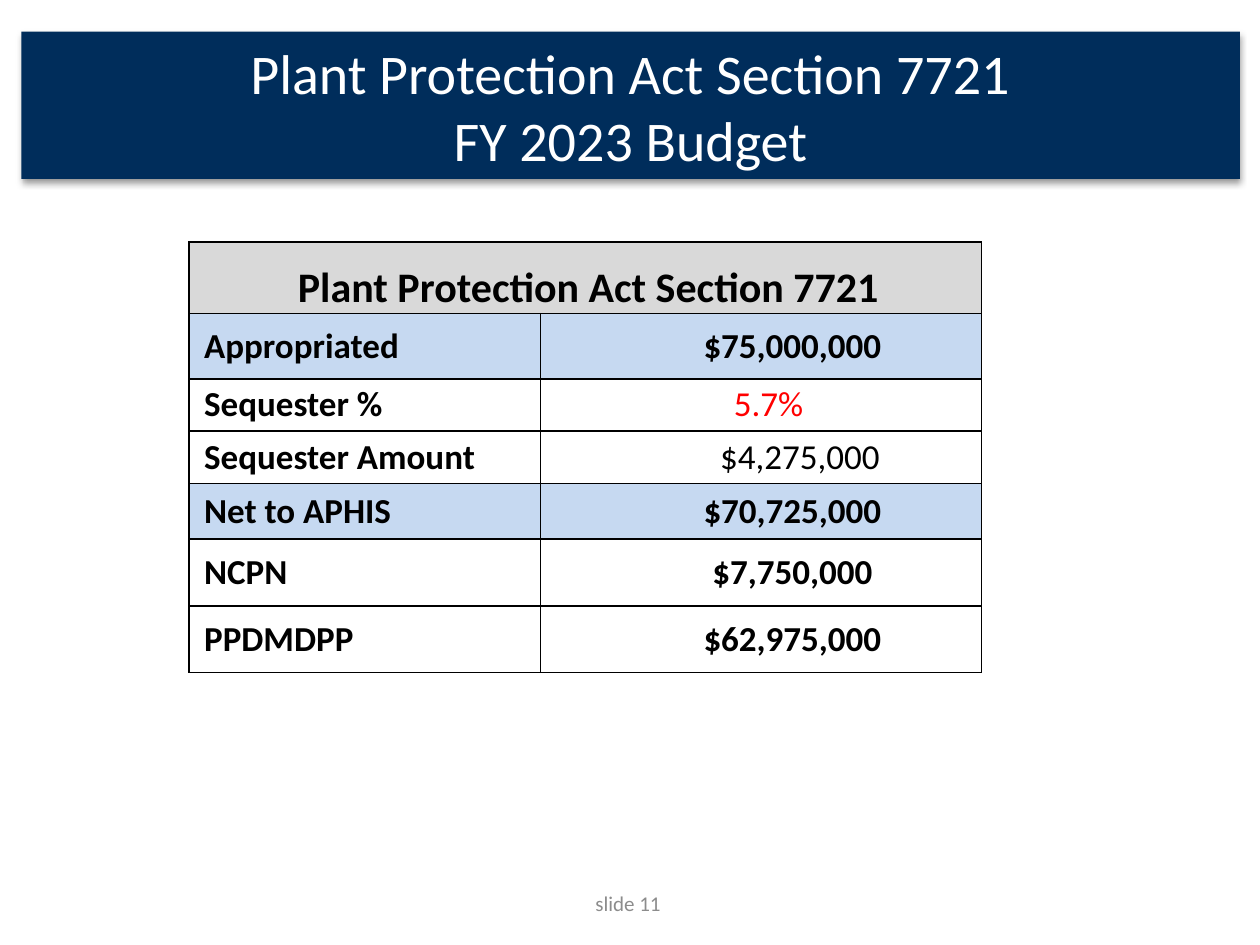
from dataclasses import dataclass

from lxml import etree
from pptx import Presentation
from pptx import util as u
from pptx.dml.color import RGBColor
from pptx.enum import text
from pptx.oxml import parse_xml

NS = "http://schemas.openxmlformats.org/drawingml/2006/main"
MID, LOW = text.MSO_ANCHOR.MIDDLE, text.MSO_ANCHOR.BOTTOM
LEFT, CENTER = text.PP_ALIGN.LEFT, text.PP_ALIGN.CENTER


@dataclass(frozen=True)
class Theme:
    face: str = "Calibri"
    navy: str = "002D5B"
    white: str = "FFFFFF"
    black: str = "000000"
    red: str = "FF0000"
    grey: str = "8C8C8C"
    head: str = "D9D9D9"
    band: str = "C6D9F1"
    title: int = 32
    top: int = 24
    body: int = 20
    foot: int = 12


T = Theme()
COLS = [2.79, 3.5]
ROWS = [0.57, 0.52, 0.41, 0.42, 0.44, 0.53, 0.53]
# label, value, fill, value indent, value bold, value colour
BUDGET = [
    ("Appropriated", "$75,000,000", T.band, 0.5, True, T.black),
    ("Sequester %", "5.7%", T.white, 0.12, False, T.red),
    ("Sequester Amount", "$4,275,000", T.white, 0.62, False, T.black),
    ("Net to APHIS", "$70,725,000", T.band, 0.5, True, T.black),
    ("NCPN", "$7,750,000", None, 0.5, True, T.black),
    ("PPDMDPP", "$62,975,000", None, 0.5, True, T.black),
]


def style(para, size, color, bold=False, align=CENTER):
    para.alignment = align
    font = para.font
    font.name, font.size, font.bold = T.face, u.Pt(size), bold
    font.color.rgb = RGBColor.from_string(color)


def paint(fill, color):
    if color:
        fill.solid()
        fill.fore_color.rgb = RGBColor.from_string(color)
    else:
        fill.background()


def place(shape, box):
    shape.left, shape.top, shape.width, shape.height = map(u.Inches, box)


def title(slide, box, words):
    shape = slide.shapes.title
    place(shape, box)
    paint(shape.fill, T.navy)
    frame = shape.text_frame
    frame.text = words
    frame.vertical_anchor = MID
    style(frame.paragraphs[0], T.title, T.white)
    shape._element.spPr.append(parse_xml(
        f'<a:effectLst xmlns:a="{NS}"><a:outerShdw blurRad="50800" '
        'dist="25400" dir="5400000"><a:srgbClr val="000000">'
        '<a:alpha val="40000"/></a:srgbClr></a:outerShdw></a:effectLst>'))


def border(cell):
    props = cell._tc.get_or_add_tcPr()
    for spot, side in enumerate("LRTB"):
        props.insert(spot, parse_xml(
            f'<a:ln{side} xmlns:a="{NS}" w="12700"><a:solidFill>'
            f'<a:srgbClr val="{T.black}"/></a:solidFill></a:ln{side}>'))


def write(cell, words, fill, indent, size=T.body, color=T.black,
          bold=True, align=CENTER, anchor=MID):
    cell.margin_left = cell.margin_right = 0
    cell.margin_top = cell.margin_bottom = 0
    cell.vertical_anchor = anchor
    cell.text = words
    para = cell.text_frame.paragraphs[0]
    style(para, size, color, bold, align)
    para._p.get_or_add_pPr().set("marL", str(u.Inches(indent)))
    paint(cell.fill, fill)


def budget(slide, box):
    grid = slide.shapes.add_table(len(ROWS), len(COLS),
                                  *map(u.Inches, box)).table
    for col, width in zip(grid.columns, COLS):
        col.width = u.Inches(width)
    for row, height in zip(grid.rows, ROWS):
        row.height = u.Inches(height)
    grid.cell(0, 0).merge(grid.cell(0, 1))
    write(grid.cell(0, 0), "Plant Protection Act Section 7721", T.head, 0.05,
          size=T.top, anchor=LOW)
    for row, (label, value, fill, indent, bold, color) in enumerate(BUDGET, 1):
        write(grid.cell(row, 0), label, fill, 0.12, align=LEFT)
        write(grid.cell(row, 1), value, fill, indent, color=color, bold=bold)
    for cell in grid.iter_cells():
        border(cell)


def footer(slide, box, words):
    frame = slide.shapes.add_textbox(*map(u.Inches, box)).text_frame
    frame.word_wrap = True
    frame.vertical_anchor = MID
    frame.text = words
    style(frame.paragraphs[0], T.foot, T.grey)


def main():
    deck = Presentation()
    deck.slide_width, deck.slide_height = u.Inches(10), u.Inches(7.5)
    slide = deck.slides.add_slide(deck.slide_layouts[5])
    footer(slide, (3.82, 6.97, 2.33, 0.4), "slide 11")
    title(slide, (0.17, 0.25, 9.67, 1.17),
          "Plant Protection Act Section 7721\vFY 2023 Budget")
    budget(slide, (1.5, 1.92, sum(COLS), sum(ROWS)))
    deck.save("out.pptx")


if __name__ == "__main__":
    main()
